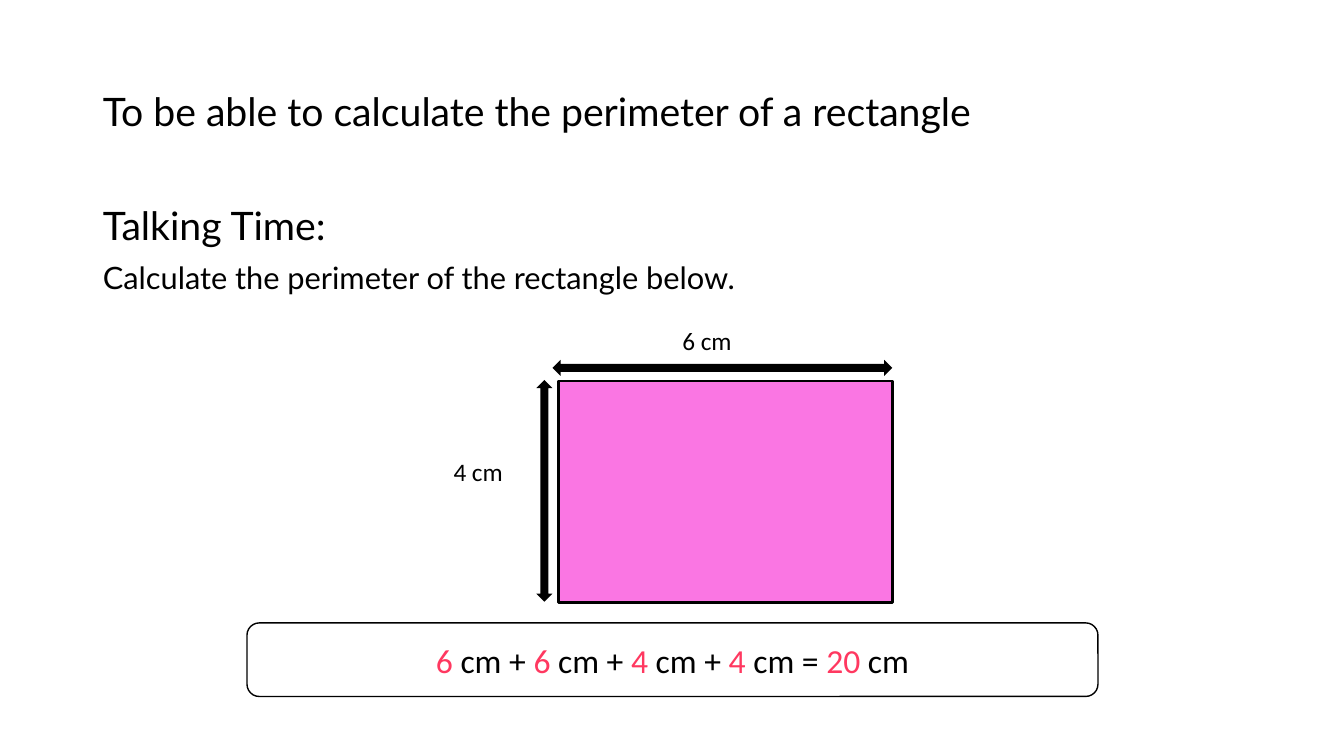
from lxml.etree import SubElement
from pptx import Presentation
from pptx.dml.color import RGBColor
from pptx.enum.shapes import MSO_SHAPE as Shape
from pptx.enum.text import MSO_ANCHOR as Anchor, MSO_AUTO_SIZE as AutoSize, PP_ALIGN as Align
from pptx.oxml.ns import qn
from pptx.util import Inches, Pt

COLOURS = {"ink": "000000", "paper": "FFFFFF", "pink": "FA76E3", "answer": "FF3860"}


def colour(name):
    """Return the named colour."""
    return RGBColor.from_string(COLOURS[name])


def set_font(font, name, size, tint="ink"):
    """Set typeface, size in points and colour."""
    font.name, font.size = name, Pt(size)
    font.color.rgb = colour(tint)


def place(shape, left, top, width, height):
    """Move a shape to a box given in inches."""
    shape.left, shape.top = Inches(left), Inches(top)
    shape.width, shape.height = Inches(width), Inches(height)


def add_shape(slide, kind, box, fill, line_width=0):
    """Add a flat shape, outlined in ink when a line width is given."""
    shape = slide.shapes.add_shape(kind, *map(Inches, box))
    shape.shadow.inherit = False
    shape.fill.solid()
    shape.fill.fore_color.rgb = colour(fill)
    if line_width:
        shape.line.color.rgb = colour("ink")
        shape.line.width = Pt(line_width)
    else:
        shape.line.fill.background()
    return shape


def fill_title(slide, box, text):
    """Write the learning objective in the title placeholder."""
    title = slide.shapes.title
    place(title, *box)
    frame = title.text_frame
    frame.text = text
    frame.auto_size = AutoSize.NONE
    frame.vertical_anchor = Anchor.MIDDLE
    paragraph = frame.paragraphs[0]
    paragraph.alignment = Align.LEFT
    paragraph.line_spacing = 0.9
    set_font(paragraph.font, "Lato", 28)


def fill_task(slide, box, lines):
    """Write the task as unbulleted lines in the body placeholder."""
    body = slide.placeholders[1]
    place(body, *box)
    frame = body.text_frame
    frame.text = "\n".join(text for text, size in lines)
    frame.auto_size = AutoSize.NONE
    for index, (paragraph, (text, size)) in enumerate(zip(frame.paragraphs, lines)):
        paragraph.line_spacing = 0.9
        paragraph.space_before = Pt(10 if index else 0)
        properties = paragraph._p.get_or_add_pPr()
        properties.set("marL", "0")
        properties.set("indent", "0")
        SubElement(properties, qn("a:buNone"))
        set_font(paragraph.font, "Lato", size)


def add_label(slide, left, top, text):
    """Add a measurement label."""
    box = slide.shapes.add_textbox(*map(Inches, (left, top, 0.86, 0.4)))
    box.text_frame.text = text
    box.text_frame.word_wrap = False
    paragraph = box.text_frame.paragraphs[0]
    paragraph.alignment = Align.LEFT
    set_font(paragraph.font, "Calibri", 18)


def add_measured_rectangle(slide, left, top, width, height):
    """Draw the rectangle with an arrow and a label for each side."""
    thickness = 0.16
    add_shape(slide, Shape.RECTANGLE, (left, top, width, height), "pink", 2)
    add_shape(slide, Shape.LEFT_RIGHT_ARROW,
              (left - 0.06, top - 0.21, width + 0.06, thickness), "ink")
    add_shape(slide, Shape.UP_DOWN_ARROW,
              (left - 0.22, top - 0.01, thickness, height), "ink")
    add_label(slide, left - 1.14, top + 0.7, "4 cm")
    add_label(slide, left + 1.13, top - 0.6, "6 cm")


def add_answer(slide, box, sides, total):
    """Show the sum of the sides with its numbers highlighted."""
    frame = add_shape(slide, Shape.ROUNDED_RECTANGLE, box, "paper", 1).text_frame
    frame.vertical_anchor = Anchor.MIDDLE
    paragraph = frame.paragraphs[0]
    paragraph.alignment = Align.CENTER
    units = [" cm + "] * (len(sides) - 1) + [" cm = ", " cm"]
    for number, unit in zip([*sides, total], units):
        for text, tint in ((str(number), "answer"), (unit, "ink")):
            run = paragraph.add_run()
            run.text = text
            set_font(run.font, "Calibri", 24, tint)


def main():
    """Build the perimeter slide and save it."""
    presentation = Presentation()
    presentation.slide_width, presentation.slide_height = Inches(13.33), Inches(7.5)
    slide = presentation.slides.add_slide(presentation.slide_layouts[1])
    fill_title(slide, (0.92, 0.4, 9.6, 1.45),
               "To be able to calculate the perimeter of a rectangle")
    fill_task(slide, (0.92, 2, 11.5, 4.76),
              [("Talking Time:", 28), ("Calculate the perimeter of the rectangle below.", 22)])
    add_measured_rectangle(slide, 5.54, 3.78, 3.31, 2.2)
    sides = [6, 6, 4, 4]
    add_answer(slide, (2.45, 6.18, 8.44, 0.73), sides, sum(sides))
    presentation.save("out.pptx")


if __name__ == "__main__":
    main()
